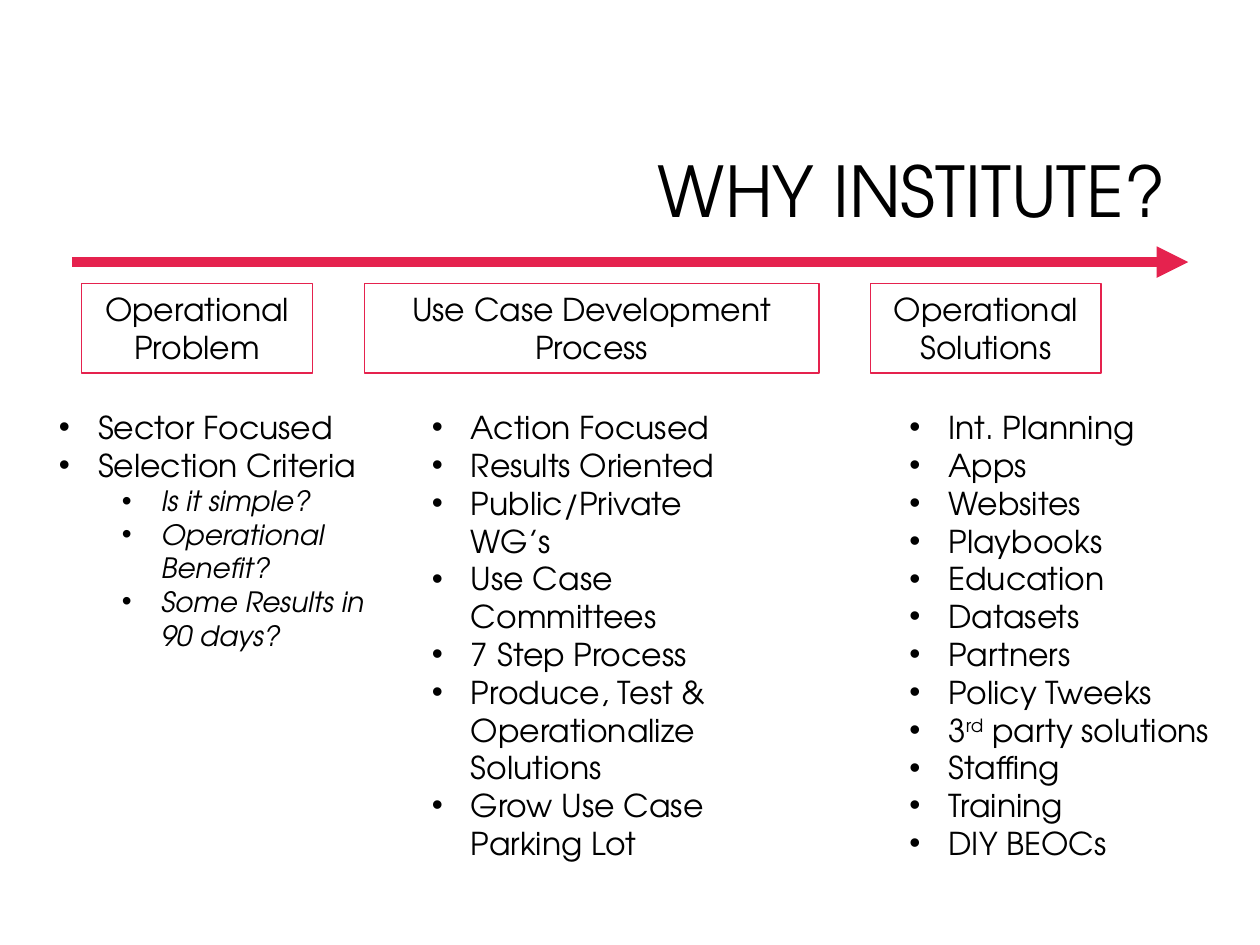
from dataclasses import dataclass

from lxml import etree
from pptx import Presentation
from pptx.dml.color import RGBColor
from pptx.enum.shapes import MSO_CONNECTOR, MSO_SHAPE
from pptx.enum.text import MSO_ANCHOR, MSO_AUTO_SIZE, PP_ALIGN
from pptx.oxml.ns import qn
from pptx.util import Inches, Pt

CENTER, RIGHT = PP_ALIGN.CENTER, PP_ALIGN.RIGHT
TOP, MIDDLE = MSO_ANCHOR.TOP, MSO_ANCHOR.MIDDLE
FIT_SHAPE = MSO_AUTO_SIZE.SHAPE_TO_FIT_TEXT
RECTANGLE, STRAIGHT = MSO_SHAPE.RECTANGLE, MSO_CONNECTOR.STRAIGHT

SLIDE_W, SLIDE_H = Inches(10), Inches(7.5)
COLS, ROWS = 100, 75


@dataclass(frozen=True)
class Theme:
    font: str = "TeX Gyre Adventor"
    ink: RGBColor = RGBColor(0x00, 0x00, 0x00)
    accent: RGBColor = RGBColor(0xE5, 0x22, 0x4E)
    title: int = 40
    body: int = 18
    detail: int = 16
    border: float = 0.75
    arrow: int = 6


THEME = Theme()

HEADER_LEFT, HEADER_TOP, HEADER_H, HEADER_GAP = 6.5, 22.5, 7.1, 4.1
STAGES = [
    ("Operational Problem", 18.3),
    ("Use Case Development Process", 36.1),
    ("Operational Solutions", 18.3),
]

LIST_TOP, LIST_W = 31.9, 27.3
HANG = Inches(0.31)
LEVEL_STEP = Inches(0.5)

PROBLEM_POINTS = [
    (0, "Sector Focused"),
    (0, "Selection Criteria"),
    (1, "Is it simple?"),
    (1, "Operational Benefit?"),
    (1, "Some Results in 90 days?"),
]
PROCESS_POINTS = [(0, point) for point in (
    "Action Focused",
    "Results Oriented",
    "Public/Private WG’s",
    "Use Case Committees",
    "7 Step Process",
    "Produce, Test & Operationalize Solutions",
    "Grow Use Case Parking Lot",
)]
# A tuple alternates normal and raised text.
SOLUTION_POINTS = [(0, point) for point in (
    "Int. Planning",
    "Apps",
    "Websites",
    "Playbooks",
    "Education",
    "Datasets",
    "Partners",
    "Policy Tweeks",
    ("3", "rd", " party solutions"),
    "Staffing",
    "Training",
    "DIY BEOCs",
)]
# Left edge, height and points of each list
LISTS = [
    (3.7, 26.6, PROBLEM_POINTS),
    (33.3, 37.4, PROCESS_POINTS),
    (71.2, 37.4, SOLUTION_POINTS),
]


def across(columns):
    return round(SLIDE_W * columns / COLS)


def down(rows):
    return round(SLIDE_H * rows / ROWS)


def grid_box(left, top, width, height):
    return across(left), down(top), across(width), down(height)


def add_run(paragraph, text, size, italic=False, raised=False):
    run = paragraph.add_run()
    run.text = text
    font = run.font
    font.name, font.size, font.italic = THEME.font, Pt(size), italic
    font.color.rgb = THEME.ink
    if raised:
        font._element.set("baseline", "30000")


def add_bullet(paragraph, level):
    """Give the paragraph a hanging bullet, indented by its level."""
    paragraph.level = level
    properties = paragraph._p.get_or_add_pPr()
    properties.set("marL", str(HANG + level * LEVEL_STEP))
    properties.set("indent", str(-HANG))
    etree.SubElement(properties, qn("a:buFont")).set("typeface", "Arial")
    etree.SubElement(properties, qn("a:buChar")).set("char", "•")


def add_text_frame(slide, box, anchor=TOP):
    frame = slide.shapes.add_textbox(*box).text_frame
    frame.word_wrap = True
    frame.vertical_anchor = anchor
    return frame


def add_title(slide, text):
    frame = add_text_frame(slide, grid_box(23.8, 8.4, 69.7, 14.1), MIDDLE)
    heading = frame.paragraphs[0]
    heading.alignment = RIGHT
    heading.line_spacing = 0.9
    add_run(heading, text, THEME.title)


def add_stage_header(slide, text, left, width):
    header = slide.shapes.add_shape(
        RECTANGLE, *grid_box(left, HEADER_TOP, width, HEADER_H))
    header.shadow.inherit = False
    header.fill.background()
    header.line.color.rgb = THEME.accent
    header.line.width = Pt(THEME.border)
    frame = header.text_frame
    frame.word_wrap = True
    frame.auto_size = FIT_SHAPE
    frame.vertical_anchor = TOP
    label = frame.paragraphs[0]
    label.alignment = CENTER
    add_run(label, text, THEME.body)


def add_bullet_list(slide, left, height, points):
    frame = add_text_frame(slide, grid_box(left, LIST_TOP, LIST_W, height))
    frame.auto_size = FIT_SHAPE
    for index, (level, point) in enumerate(points):
        paragraph = frame.add_paragraph() if index else frame.paragraphs[0]
        add_bullet(paragraph, level)
        size = THEME.detail if level else THEME.body
        parts = (point,) if isinstance(point, str) else point
        for position, part in enumerate(parts):
            add_run(paragraph, part, size, italic=level > 0,
                    raised=position % 2 == 1)


def add_timeline_arrow(slide, start, end, row):
    arrow = slide.shapes.add_connector(
        STRAIGHT, across(start), down(row), across(end), down(row))
    arrow.line.color.rgb = THEME.accent
    arrow.line.width = Pt(THEME.arrow)
    line = arrow.line._get_or_add_ln()
    etree.SubElement(line, qn("a:tailEnd")).set("type", "triangle")
    etree.SubElement(arrow._element.spPr, qn("a:effectLst"))


def main():
    deck = Presentation()
    deck.slide_width, deck.slide_height = SLIDE_W, SLIDE_H
    slide = deck.slides.add_slide(deck.slide_layouts[6])

    add_title(slide, "WHY INSTITUTE?")
    left = HEADER_LEFT
    for stage, width in STAGES:
        add_stage_header(slide, stage, left, width)
        left += width + HEADER_GAP
    for left, height, points in LISTS:
        add_bullet_list(slide, left, height, points)
    add_timeline_arrow(slide, 5.7, 94.3, 20.8)

    deck.save("out.pptx")


if __name__ == "__main__":
    main()
